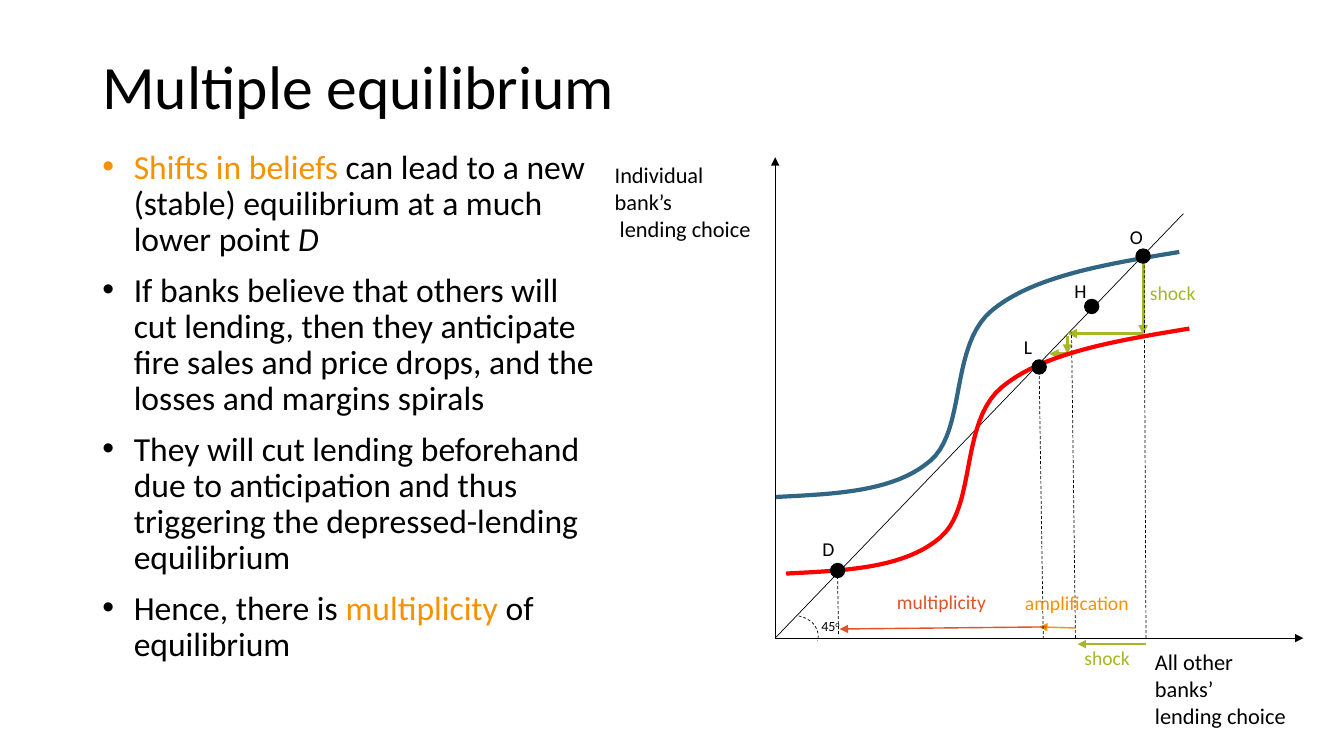
from lxml import etree
from pptx import Presentation
from pptx.dml.color import RGBColor
from pptx.enum import dml, shapes, text
from pptx.oxml import ns
from pptx.util import Pt

COLORS = {"black": "000000", "orange": "F69200", "green": "A6B727",
          "rust": "DF5327", "red": "FF0000", "blue": "306684"}
FONT = "Calibri"

TITLE_BOX = (66, 14.4, 878, 77)
BODY_BOX = (66, 103.7, 366, 403)
DIAGRAM_BOX = (432, 108, 500, 400)

BULLETS = [
    [("Shifts in beliefs ", {"color": "orange"}),
     ("can lead to a new (stable) equilibrium at a much lower point ", {}),
     ("D", {"italic": True})],
    [("If banks believe that others will cut lending, then they anticipate "
      "fire sales and price drops, and the losses and margins spirals", {})],
    [("They will cut lending beforehand due to anticipation and thus "
      "triggering the depressed-lending equilibrium", {})],
    [("Hence, there is ", {}), ("multiplicity", {"color": "orange"}),
     (" of equilibrium", {})],
]

# Diagram lengths are relative to the top left corner of DIAGRAM_BOX.
ORIGIN = (121.7, 347.8)
# x1, y1, x2, y2, colour, width, arrow, dashed
LINES = [
    (*ORIGIN, 499, 347.8, "black", 0.5, True, False),
    (*ORIGIN, 121.7, 4.3, "black", 0.5, True, False),
    (*ORIGIN, 413.3, 44.6, "black", 0.5, False, False),
    (384.5, 80, 384.5, 131, "green", 2.25, True, False),
    (384.5, 130.3, 330.5, 130.3, "green", 2.25, True, False),
    (330.5, 131.8, 330.5, 144.7, "green", 2.25, True, False),
    (332.6, 144.7, 317.5, 144.7, "green", 2.25, True, False),
    (386.6, 352.1, 337.7, 352.1, "green", 1, True, False),
    (336.2, 340.6, 310.3, 339.8, "orange", 1, True, False),
    (315.4, 339.8, 167.8, 341.3, "rust", 1, True, False),
    (386.6, 347.8, 385.2, 72.7, "black", 0.5, False, True),
    (336.2, 347.8, 333.4, 129.6, "black", 0.5, False, True),
    (167, 344.9, 166.3, 304.6, "black", 0.5, False, True),
    (313.2, 348.5, 310.3, 157.7, "black", 0.5, False, True),
]
LOW_CURVE = [(129.6, 301.7), (172.1, 299.5), (213.8, 298.1), (239.8, 275.8),
             (265.7, 253.4), (253.4, 193.7), (283.7, 168.5), (313.2, 144),
             (365, 135.4), (417.6, 126.7)]
# colour, shift of the low curve
CURVES = [("red", 0, 0), ("blue", -7.2, -54.7)]
EQUILIBRIA = [(384.5, 74.9), (347.8, 110.9), (310.3, 154.1), (166.3, 299.5)]
DOT = 10
# x, y, width, height, size, colour, paragraphs
LABELS = [
    (385.9, 351.4, 112, 48, 16, "black", ["All other banks’", "lending choice"]),
    (0, 3.6, 119, 48, 16, "black", ["Individual bank’s", " lending choice"]),
    (382.3, 89.3, 56, 25, 14, "green", ["shock"]),
    (335.5, 350, 56, 25, 14, "green", ["shock"]),
    (293, 310.3, 109, 25, 14, "orange", ["amplification"]),
    (201.6, 309.6, 109, 25, 14, "rust", ["multiplicity"]),
    (367.9, 49, 24, 25, 14, "black", ["O"]),
    (328.3, 87.8, 17, 25, 14, "black", ["H"]),
    (292.3, 127.4, 18, 25, 14, "black", ["L"]),
    (148.3, 272.2, 19, 25, 14, "black", ["D"]),
]


def rgb(name):
    return RGBColor.from_string(COLORS[name])


def set_line(line, color, width, dashed=False):
    line.color.rgb = rgb(color)
    line.width = Pt(width)
    if dashed:
        line.dash_style = dml.MSO_LINE.DASH


def add_text(parent, box, paragraphs, size, color="black", **frame_format):
    """Add a text box; each paragraph is a list of (text, format) runs."""
    tf = parent.add_textbox(*map(Pt, box)).text_frame
    for name, value in {"word_wrap": True, **frame_format}.items():
        setattr(tf, name, value)
    for i, runs in enumerate(paragraphs):
        p = tf.paragraphs[0] if i == 0 else tf.add_paragraph()
        for content, fmt in runs:
            r = p.add_run()
            r.text = content
            r.font.color.rgb = rgb(fmt.get("color", color))
            font_format = {"name": FONT, "size": Pt(size),
                           "italic": fmt.get("italic", False)}
            for name, value in font_format.items():
                setattr(r.font, name, value)
            if "baseline" in fmt:
                r.font._element.set("baseline", str(fmt["baseline"]))
    return tf


def add_title(s, box):
    tf = add_text(s.shapes, box, [[("Multiple equilibrium", {})]], 44,
                  vertical_anchor=text.MSO_ANCHOR.BOTTOM)
    tf.paragraphs[0].line_spacing = 0.9


def add_bullets(s, box):
    tf = add_text(s.shapes, box, BULLETS, 24)
    for p in tf.paragraphs:
        p.line_spacing = 0.9
        p.space_before = Pt(10)
        props = p._p.get_or_add_pPr()
        props.set("marL", str(Pt(22.5)))
        props.set("indent", str(-Pt(22.5)))
        etree.SubElement(props, ns.qn("a:buFont"), typeface="Arial")
        etree.SubElement(props, ns.qn("a:buChar"), char="•")


def add_line(parent, x1, y1, x2, y2, color, width, arrow, dashed):
    c = parent.add_connector(shapes.MSO_CONNECTOR.STRAIGHT,
                             *map(Pt, (x1, y1, x2, y2)))
    set_line(c.line, color, width, dashed)
    if arrow:
        etree.SubElement(c.line._get_or_add_ln(), ns.qn("a:tailEnd"),
                         type="triangle")
    etree.SubElement(c._element.spPr, ns.qn("a:effectLst"))


def bezier_points(controls, steps=20):
    """Sample a chain of cubic curves that share their end points."""
    points = [controls[0]]
    for i in range(0, len(controls) - 1, 3):
        for k in range(1, steps + 1):
            t = k / steps
            weights = ((1 - t) ** 3, 3 * t * (1 - t) ** 2,
                       3 * t * t * (1 - t), t ** 3)
            points.append(tuple(
                sum(w * c[axis] for w, c in zip(weights, controls[i:i + 4]))
                for axis in (0, 1)))
    return points


def add_curve(parent, controls, color):
    points = [(Pt(x), Pt(y)) for x, y in bezier_points(controls)]
    builder = parent.build_freeform(*points[0])
    builder.add_line_segments(points[1:], close=False)
    sp = builder.convert_to_shape()
    sp.shadow.inherit = False
    sp.fill.background()
    set_line(sp.line, color, 3)


def add_diagram(s, box):
    left, top = box[:2]
    parts = s.shapes.add_group_shape().shapes
    for x1, y1, x2, y2, *style in LINES:
        add_line(parts, left + x1, top + y1, left + x2, top + y2, *style)
    for color, dx, dy in CURVES:
        add_curve(parts, [(left + x + dx, top + y + dy) for x, y in LOW_CURVE],
                  color)
    for x, y in EQUILIBRIA:
        dot = parts.add_shape(
            shapes.MSO_SHAPE.OVAL, Pt(left + x - DOT / 2),
            Pt(top + y - DOT / 2), Pt(DOT), Pt(DOT))
        dot.shadow.inherit = False
        dot.fill.solid()
        dot.fill.fore_color.rgb = rgb("black")
        set_line(dot.line, "black", 1)

    arc = parts.add_shape(shapes.MSO_SHAPE.ARC, Pt(left + 121), Pt(top + 332),
                          Pt(31.7), Pt(26.6))
    arc.shadow.inherit = False
    arc.rotation = 13.2
    arc.adjustments[0], arc.adjustments[1] = 158.24, 1.88
    arc.fill.background()
    set_line(arc.line, "black", 0.5, dashed=True)

    for x, y, w, h, size, color, lines in LABELS:
        add_text(parts, (left + x, top + y, w, h),
                 [[(line, {})] for line in lines], size, color)
    add_text(parts, (left + 147.6, top + 329.8, 30, 20),
             [[("45", {}), ("o", {"baseline": 30000})]], 10)


def main():
    prs = Presentation()
    prs.slide_width, prs.slide_height = Pt(960), Pt(540)
    s = prs.slides.add_slide(prs.slide_layouts[6])
    add_title(s, TITLE_BOX)
    add_bullets(s, BODY_BOX)
    add_diagram(s, DIAGRAM_BOX)
    prs.save("out.pptx")


if __name__ == "__main__":
    main()
